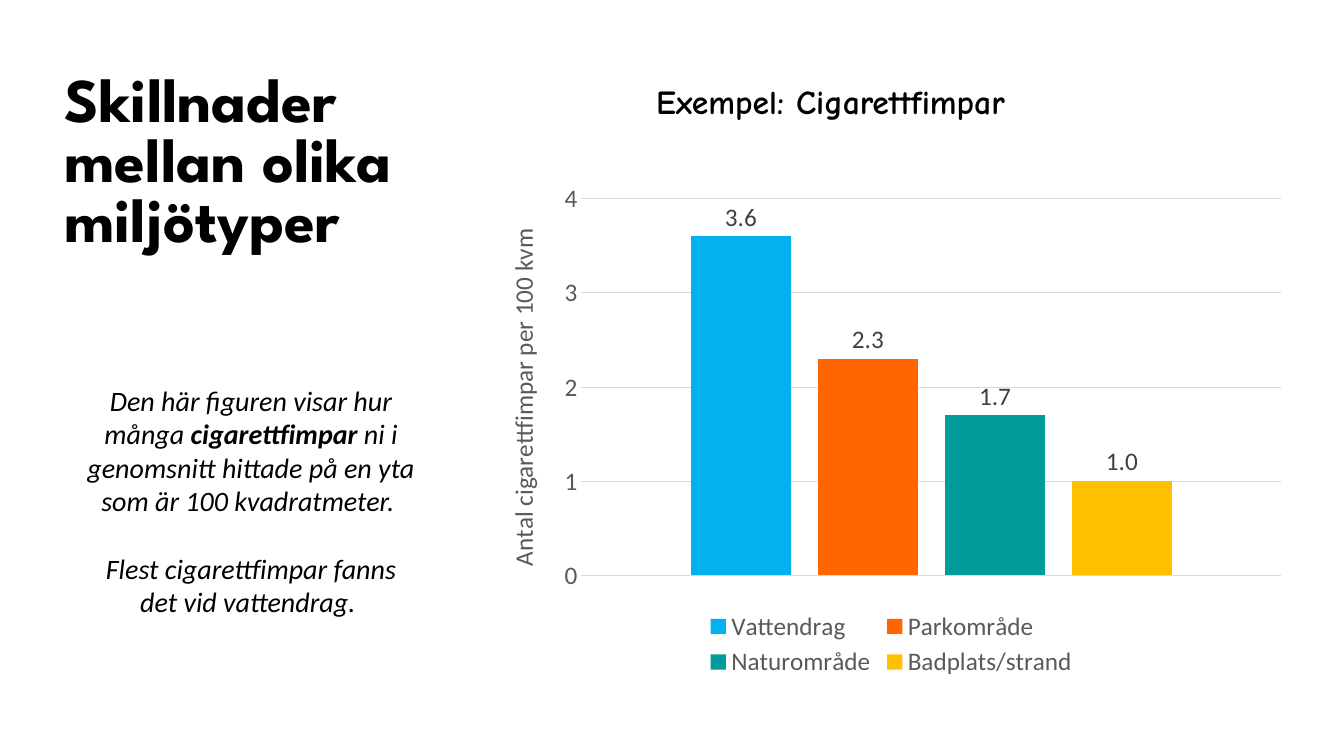
from lxml import etree
from pptx import Presentation
from pptx.chart.data import CategoryChartData
from pptx.dml.color import RGBColor
from pptx.enum.chart import XL_CHART_TYPE, XL_LABEL_POSITION, XL_LEGEND_POSITION, XL_TICK_MARK
from pptx.enum.text import MSO_ANCHOR, MSO_AUTO_SIZE, PP_ALIGN
from pptx.oxml.ns import qn
from pptx.util import Inches, Pt

HABITATS = [
    ("Vattendrag", 3.6, "03B0F0"),
    ("Parkområde", 2.3, "FF6600"),
    ("Naturområde", 1.7, "009C9B"),
    ("Badplats/strand", 1.0, "FFC000"),
]
EXPLANATION = [
    [("Den här figuren visar hur många ", False), ("cigarettfimpar", True),
     (" ni i genomsnitt hittade på en yta som är 100 kvadratmeter. ", False)],
    [("Flest cigarettfimpar fanns det vid vattendrag. ", False)],
]


def color(hex_value):
    return RGBColor.from_string(hex_value)


def style(font, size, hex_value, name="Calibri", bold=False, italic=False):
    font.size = Pt(size)
    font.name = name
    font.bold = bold
    font.italic = italic
    font.color.rgb = color(hex_value)


def place(part, box):
    part.left, part.top, part.width, part.height = map(Inches, box)


def add_heading(slide, box):
    heading = slide.shapes.title
    place(heading, box)
    frame = heading.text_frame
    frame.text = "Skillnader mellan olika miljötyper"
    frame.word_wrap = True
    frame.auto_size = MSO_AUTO_SIZE.NONE
    frame.vertical_anchor = MSO_ANCHOR.BOTTOM
    paragraph = frame.paragraphs[0]
    paragraph.alignment = PP_ALIGN.LEFT
    paragraph.line_spacing = 0.8
    style(paragraph.runs[0].font, 44.4, "000000", "League Spartan", bold=True)


def add_explanation(slide, box):
    explanation = slide.placeholders[1]
    place(explanation, box)
    frame = explanation.text_frame
    frame.word_wrap = True
    frame.auto_size = MSO_AUTO_SIZE.NONE
    frame.vertical_anchor = MSO_ANCHOR.TOP
    for index, pieces in enumerate(EXPLANATION):
        paragraph = frame.add_paragraph() if index else frame.paragraphs[0]
        properties = paragraph._p.get_or_add_pPr()
        properties.set("marL", "0")
        properties.set("indent", "0")
        etree.SubElement(properties, qn("a:buNone"))
        paragraph.alignment = PP_ALIGN.CENTER
        paragraph.space_before = Pt(24 * index)
        for words, bold in pieces:
            run = paragraph.add_run()
            run.text = words
            style(run.font, 20, "000000", bold=bold, italic=True)


def add_example_label(slide, box):
    label = slide.shapes.add_textbox(*map(Inches, box))
    frame = label.text_frame
    frame.word_wrap = True
    frame.text = "Exempel: Cigarettfimpar"
    style(frame.paragraphs[0].runs[0].font, 24, "000000", "Comic Neue", bold=True)


def set_layout(parent, index, inner=False, **shares):
    for old in parent.findall(qn("c:layout")):
        parent.remove(old)
    layout = etree.Element(qn("c:layout"))
    manual = etree.SubElement(layout, qn("c:manualLayout"))
    if inner:
        etree.SubElement(manual, qn("c:layoutTarget")).set("val", "inner")
    for mode in ("xMode", "yMode"):
        etree.SubElement(manual, qn(f"c:{mode}")).set("val", "edge")
    for key, share in shares.items():
        etree.SubElement(manual, qn(f"c:{key}")).set("val", str(share))
    parent.insert(index, layout)


def format_value_axis(axis):
    axis.minimum_scale, axis.maximum_scale, axis.major_unit = 0, 4, 1
    axis.major_tick_mark = axis.minor_tick_mark = XL_TICK_MARK.NONE
    axis.format.line.fill.background()
    axis.tick_labels.number_format = "0"
    axis.tick_labels.number_format_is_linked = False
    style(axis.tick_labels.font, 18, "595959")
    gridline = axis.major_gridlines.format.line
    gridline.color.rgb = color("D9D9D9")
    gridline.width = Pt(0.75)
    title = axis.axis_title
    title.text_frame.text = "Antal cigarettfimpar per 100 kvm"
    style(title.text_frame.paragraphs[0].runs[0].font, 18, "595959")
    set_layout(title._element, 1, x=0.02, y=0.1)


def add_habitat_chart(slide, box):
    data = CategoryChartData(number_format="0.0")
    data.categories = ["1"]
    for habitat, density, _ in HABITATS:
        data.add_series(habitat, [density])
    chart = slide.shapes.add_chart(
        XL_CHART_TYPE.COLUMN_CLUSTERED, *map(Inches, box), data).chart
    chart.has_title = False
    style(chart.font, 18, "000000")
    chart.category_axis.visible = False
    format_value_axis(chart.value_axis)

    plot = chart.plots[0]
    plot.gap_width = 219
    plot.overlap = -27
    plot.vary_by_categories = False
    for series, (_, _, fill) in zip(plot.series, HABITATS):
        series.format.fill.solid()
        series.format.fill.fore_color.rgb = color(fill)
        labels = series.data_labels
        labels.show_value = True
        labels.number_format = "0.0"
        labels.number_format_is_linked = False
        labels.position = XL_LABEL_POSITION.OUTSIDE_END
        style(labels.font, 18, "404040")

    chart.has_legend = True
    legend = chart.legend
    legend.position = XL_LEGEND_POSITION.BOTTOM
    legend.include_in_layout = False
    style(legend.font, 18, "595959")
    set_layout(legend._element, 1, x=0.27, y=0.85, w=0.47, h=0.15)
    plot_area = chart._chartSpace.find(".//" + qn("c:plotArea"))
    set_layout(plot_area, 0, inner=True, x=0.12, y=0.05, w=0.87, h=0.74)


def main():
    presentation = Presentation()
    presentation.slide_width = Inches(13.33)
    presentation.slide_height = Inches(7.5)
    slide = presentation.slides.add_slide(presentation.slide_layouts[1])
    add_habitat_chart(slide, (4.81, 1.72, 7.98, 5.05))
    add_example_label(slide, (6.41, 0.75, 5.74, 0.5))
    add_explanation(slide, (0.75, 3.75, 3.48, 2.46))
    add_heading(slide, (0.54, 0.69, 4.63, 1.88))
    presentation.save("out.pptx")


if __name__ == "__main__":
    main()
